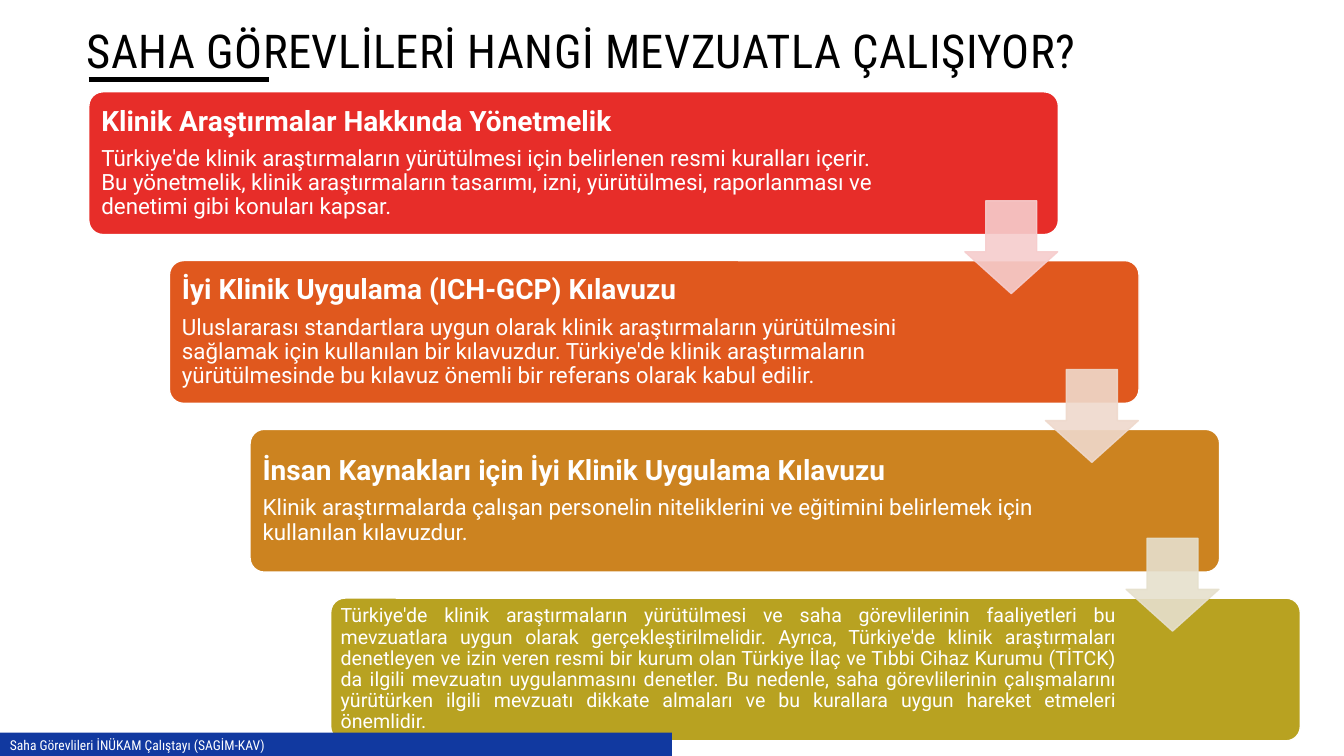
from lxml import etree
from pptx import Presentation
from pptx.dml.color import RGBColor
from pptx.enum import shapes, text
from pptx.oxml.ns import qn
from pptx.util import Pt

BLACK = RGBColor(0x00, 0x00, 0x00)
WHITE = RGBColor(0xFF, 0xFF, 0xFF)
BLUE = RGBColor(0x11, 0x39, 0xA0)
RED = RGBColor(0xE7, 0x2D, 0x29)
ORANGE = RGBColor(0xE0, 0x58, 0x1E)
OCHRE = RGBColor(0xCC, 0x83, 0x20)
OLIVE = RGBColor(0xB8, 0xA2, 0x21)
PALE_RED = RGBColor(0xF6, 0xCD, 0xCD)
PALE_ORANGE = RGBColor(0xEF, 0xD9, 0xCC)
PALE_OCHRE = RGBColor(0xE6, 0xE0, 0xCD)

BODY_FONT, NARROW_FONT = "Roboto", "Roboto Condensed"
STEP_X, STEP_Y = 57.6, 120.55

# colour, text width, heading, body
CARDS = [
    (RED, 574, "Klinik Araştırmalar Hakkında Yönetmelik",
     "Türkiye'de klinik araştırmaların yürütülmesi için belirlenen resmi kuralları içerir. "
     "Bu yönetmelik, klinik araştırmaların tasarımı, izni, yürütülmesi, raporlanması ve "
     "denetimi gibi konuları kapsar."),
    (ORANGE, 562.5, "İyi Klinik Uygulama (ICH-GCP) Kılavuzu",
     "Uluslararası standartlara uygun olarak klinik araştırmaların yürütülmesini "
     "sağlamak için kullanılan bir kılavuzdur. Türkiye'de klinik araştırmaların "
     "yürütülmesinde bu kılavuz önemli bir referans olarak kabul edilir."),
    (OCHRE, 562.5, "İnsan Kaynakları için İyi Klinik Uygulama Kılavuzu",
     "Klinik araştırmalarda çalışan personelin niteliklerini ve eğitimini belirlemek için "
     "kullanılan kılavuzdur."),
    (OLIVE, 562.5, None,
     "Türkiye'de klinik araştırmaların yürütülmesi ve saha görevlilerinin faaliyetleri bu "
     "mevzuatlara uygun olarak gerçekleştirilmelidir. Ayrıca, Türkiye'de klinik araştırmaları "
     "denetleyen ve izin veren resmi bir kurum olan Türkiye İlaç ve Tıbbi Cihaz Kurumu (TİTCK) "
     "da ilgili mevzuatın uygulanmasını denetler. Bu nedenle, saha görevlilerinin çalışmalarını "
     "yürütürken ilgili mevzuatı dikkate almaları ve bu kurallara uygun hareket etmeleri "
     "önemlidir."),
]


def add_shape(kind, x, y, w, h, fill, line=None):
    sp = s.shapes.add_shape(kind, Pt(x), Pt(y), Pt(w), Pt(h))
    sp.shadow.inherit = False
    sp.fill.solid()
    sp.fill.fore_color.rgb = fill
    if line is None:
        sp.line.fill.background()
    else:
        sp.line.color.rgb = line
        sp.line.width = Pt(1)
    return sp


def add_run(p, words, size, font, color, bold=False):
    r = p.add_run()
    r.text = words
    r.font.size = Pt(size)
    r.font.name = font
    r.font.bold = bold
    r.font.color.rgb = color
    return r


prs = Presentation()
prs.slide_width, prs.slide_height = Pt(960), Pt(540)
s = prs.slides.add_slide(prs.slide_layouts[6])

# Title and its underline
rule = s.shapes.add_connector(shapes.MSO_CONNECTOR.STRAIGHT, Pt(63.4), Pt(56.9), Pt(192.2), Pt(56.9))
rule.line.color.rgb = BLACK
rule.line.width = Pt(3.5)
etree.SubElement(rule._element.spPr, qn("a:effectLst"))

title = s.shapes.add_textbox(Pt(54.7), Pt(8.6), Pt(850.3), Pt(40.3))
tf = title.text_frame
tf.word_wrap = True
tf.margin_top, tf.margin_bottom = Pt(6.9), Pt(0)
r = add_run(tf.paragraphs[0], "SAHA GÖREVLİLERİ HANGİ MEVZUATLA ÇALIŞIYOR?", 33.3, NARROW_FONT, BLACK)
r.font._element.set("spc", "30")

# Staircase of cards
for i, (color, text_width, heading, body) in enumerate(CARDS):
    x, y = 63.4 + i * STEP_X, 65.6 + i * STEP_Y
    card = add_shape(shapes.MSO_SHAPE.ROUNDED_RECTANGLE, x, y, 692.6, 102, color, WHITE)
    card.adjustments[0] = 0.1

    box = s.shapes.add_textbox(Pt(x + 3), Pt(y + 3), Pt(text_width), Pt(96))
    tf = box.text_frame
    tf.word_wrap = True
    tf.vertical_anchor = text.MSO_ANCHOR.MIDDLE
    inset = Pt(6 if heading else 4.2)
    tf.margin_left = tf.margin_top = tf.margin_right = tf.margin_bottom = inset
    p = tf.paragraphs[0]
    if heading:
        add_run(p, heading, 20, BODY_FONT, WHITE, bold=True)
        p.line_spacing, p.space_after = 0.9, Pt(7)
        p = tf.add_paragraph()
    else:
        p.alignment = text.PP_ALIGN.JUSTIFY
    add_run(p, body, 16 if heading else 14, BODY_FONT, WHITE)
    p.line_spacing, p.space_after = 0.9, Pt(5)

# Arrows from each card to the next
for i, color in enumerate([PALE_RED, PALE_ORANGE, PALE_OCHRE]):
    arrow = add_shape(shapes.MSO_SHAPE.DOWN_ARROW, 689.2 + i * STEP_X, 143.4 + i * STEP_Y,
                      66.3, 66.3, color, color)
    arrow.adjustments[0], arrow.adjustments[1] = 0.55, 0.45
    for clr in arrow._element.spPr.iter(qn("a:srgbClr")):
        etree.SubElement(clr, qn("a:alpha"), val="90000")

# Footer
footer = add_shape(shapes.MSO_SHAPE.RECTANGLE, 0, 523.4, 480, 17, BLUE)
tf = footer.text_frame
tf.word_wrap = True
tf.vertical_anchor = text.MSO_ANCHOR.MIDDLE
p = tf.paragraphs[0]
p.alignment = text.PP_ALIGN.LEFT
add_run(p, "Saha Görevlileri İNÜKAM Çalıştayı (SAGİM-KAV)", 9.7, NARROW_FONT, WHITE)

prs.save("out.pptx")
